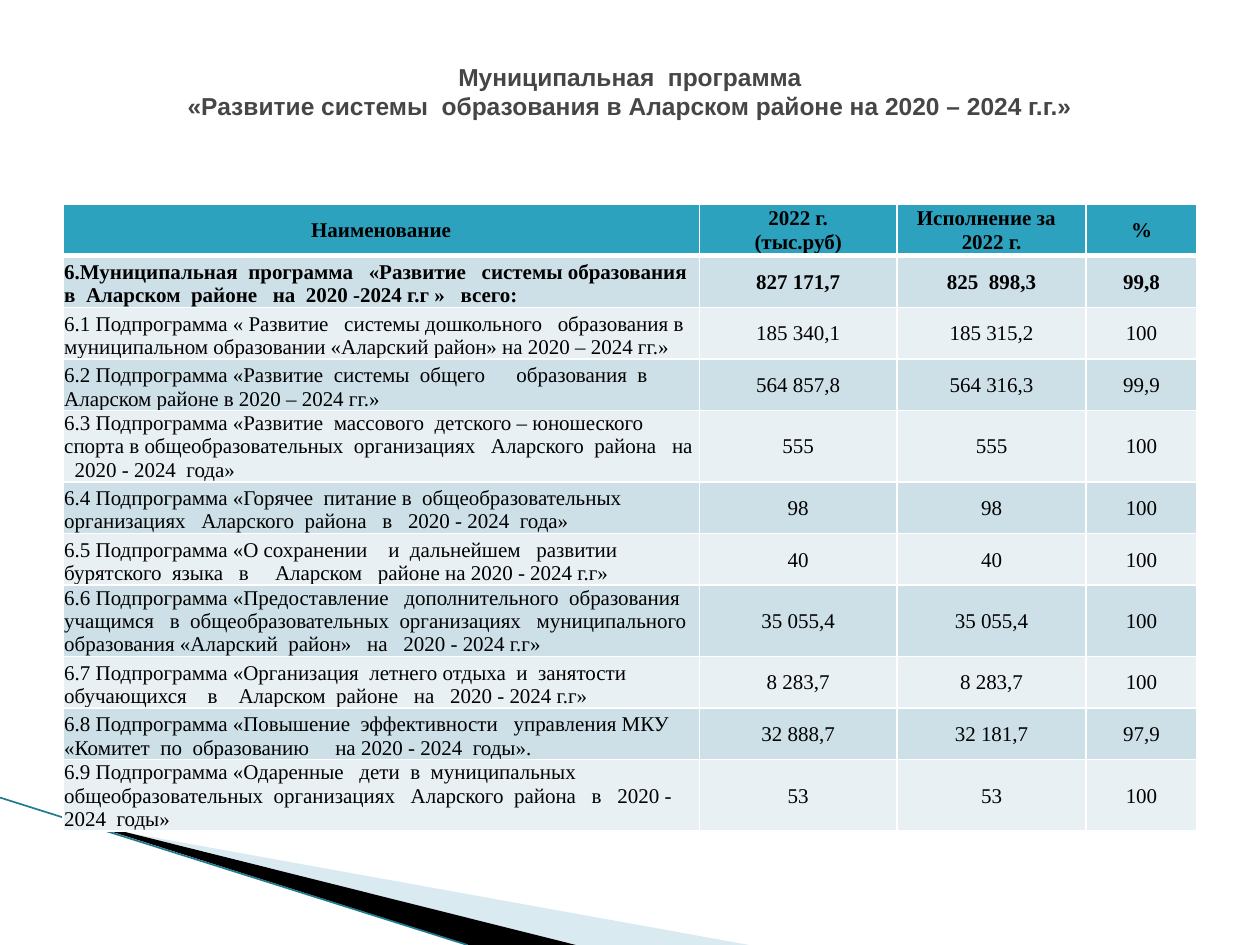
from dataclasses import dataclass

from lxml.etree import SubElement
from pptx import Presentation
from pptx.dml.color import RGBColor
from pptx.enum.shapes import MSO_CONNECTOR as Connector
from pptx.enum.text import MSO_ANCHOR as Anchor, PP_ALIGN as Align
from pptx.oxml.ns import qn
from pptx.util import Emu, Inches, Pt

SLIDE_WIDTH, SLIDE_HEIGHT = Inches(10), Inches(7.5)
WHITE = RGBColor(0xFF, 0xFF, 0xFF)
BLACK = RGBColor(0x00, 0x00, 0x00)
TITLE_GREY = RGBColor(0x46, 0x46, 0x46)
HEADER_TEAL = RGBColor(0x2D, 0xA2, 0xBF)
BAND_DARK = RGBColor(0xCD, 0xE0, 0xE8)
BAND_LIGHT = RGBColor(0xE8, 0xF0, 0xF4)
WEDGE_BLUE = RGBColor(0xA0, 0xCB, 0xDC)
EDGE_TEAL = RGBColor(0x1F, 0x7A, 0x8F)

COLUMN_SHARES = (0.505, 0.157, 0.15, 0.088)
ROW_SHARE = 0.41 / 7.5
TITLE = "Муниципальная  программа\v«Развитие системы  образования в Аларском районе на 2020 – 2024 г.г.»"


@dataclass(frozen=True)
class BudgetRow:
    name: str
    plan: str
    actual: str
    percent: str = "100"

    def texts(self) -> tuple[str, ...]:
        return self.name, self.plan, self.actual, self.percent


@dataclass(frozen=True)
class Wedge:
    points: tuple[tuple[float, float], ...]
    color: RGBColor
    opacity: int = 100


HEADER = BudgetRow("Наименование", "2022 г.\n(тыс.руб)", "Исполнение за   2022 г.", "%")
BUDGET = (
    BudgetRow("6.Муниципальная  программа   «Развитие   системы образования в  Аларском  районе   на  2020 -2024 г.г »   всего:",
              "827 171,7", "825  898,3", "99,8"),
    BudgetRow("6.1 Подпрограмма « Развитие   системы дошкольного   образования в муниципальном образовании «Аларский район» на 2020 – 2024 гг.»",
              "185 340,1", "185 315,2"),
    BudgetRow("6.2 Подпрограмма «Развитие  системы  общего      образования  в  Аларском районе в 2020 – 2024 гг.»",
              "564 857,8", "564 316,3", "99,9"),
    BudgetRow("6.3 Подпрограмма «Развитие  массового  детского – юношеского  спорта в общеобразовательных  организациях   Аларского  района   на   2020 - 2024  года»",
              "555", "555"),
    BudgetRow("6.4 Подпрограмма «Горячее  питание в  общеобразовательных  организациях   Аларского  района   в   2020 - 2024  года»",
              "98", "98"),
    BudgetRow("6.5 Подпрограмма «О сохранении    и  дальнейшем   развитии   бурятского  языка   в     Аларском   районе на 2020 - 2024 г.г»",
              "40", "40"),
    BudgetRow("6.6 Подпрограмма «Предоставление   дополнительного  образования  учащимся   в  общеобразовательных  организациях   муниципального образования «Аларский  район»   на   2020 - 2024 г.г»",
              "35 055,4", "35 055,4"),
    BudgetRow("6.7 Подпрограмма «Организация  летнего отдыха  и  занятости     обучающихся    в    Аларском  районе   на   2020 - 2024 г.г»",
              "8 283,7", "8 283,7"),
    BudgetRow("6.8 Подпрограмма «Повышение  эффективности   управления МКУ  «Комитет  по  образованию     на 2020 - 2024  годы».",
              "32 888,7", "32 181,7", "97,9"),
    BudgetRow("6.9 Подпрограмма «Одаренные   дети  в  муниципальных    общеобразовательных  организациях   Аларского  района   в   2020 - 2024  годы»",
              "53", "53"),
)
WEDGES = (
    Wedge(((0.055, 0.87), (0.595, 1), (0.456, 1)), WEDGE_BLUE, 40),
    Wedge(((0.053, 0.865), (0.457, 1), (0.372, 1)), BLACK),
)


def across(share: float) -> Emu:
    return Emu(round(SLIDE_WIDTH * share))


def down(share: float) -> Emu:
    return Emu(round(SLIDE_HEIGHT * share))


def write_text(frame, text: str, *, font: str, size: float, color: RGBColor,
               bold: bool = False, align: Align = Align.LEFT) -> None:
    frame.word_wrap = True
    for index, line in enumerate(text.split("\n")):
        para = frame.add_paragraph() if index else frame.paragraphs[0]
        para.text = line
        para.alignment = align
        for span in para.runs:
            span.font.name = font
            span.font.size = Pt(size)
            span.font.bold = bold
            span.font.color.rgb = color


def draw_wedge(page, wedge: Wedge) -> None:
    start, *others = [(across(x), down(y)) for x, y in wedge.points]
    builder = page.shapes.build_freeform(*start)
    builder.add_line_segments(others, close=True)
    shape = builder.convert_to_shape()
    shape.shadow.inherit = False
    shape.line.fill.background()
    shape.fill.solid()
    shape.fill.fore_color.rgb = wedge.color
    if wedge.opacity < 100:
        color = shape.fill._xPr.find(qn("a:solidFill"))[0]
        SubElement(color, qn("a:alpha"), val=str(wedge.opacity * 1000))


def draw_edge(page) -> None:
    edge = page.shapes.add_connector(Connector.STRAIGHT, 0, down(0.844), across(0.371), down(1))
    edge.line.color.rgb = EDGE_TEAL
    edge.line.width = Pt(0.95)
    SubElement(edge._element.spPr, qn("a:effectLst"))


def set_borders(cell, widths: dict[str, float]) -> None:
    properties = cell._tc.get_or_add_tcPr()
    for side, width in widths.items():
        border = SubElement(properties, qn(f"a:ln{side}"), w=str(Pt(width)))
        fill = SubElement(border, qn("a:solidFill"))
        SubElement(fill, qn("a:srgbClr"), val=str(WHITE))


def draw_table(page) -> None:
    rows = (HEADER, *BUDGET)
    frame = page.shapes.add_table(len(rows), len(COLUMN_SHARES), across(0.05), down(0.216),
                                  across(sum(COLUMN_SHARES)), down(ROW_SHARE * len(rows)))
    table = frame.table
    for column, share in zip(table.columns, COLUMN_SHARES):
        column.width = across(share)
    for row_index, row in enumerate(rows):
        table.rows[row_index].height = down(ROW_SHARE)
        is_header = row_index == 0
        band = HEADER_TEAL if is_header else BAND_DARK if row_index % 2 else BAND_LIGHT
        for column_index, text in enumerate(row.texts()):
            cell = table.cell(row_index, column_index)
            is_name = column_index == 0 and not is_header
            cell.margin_left = cell.margin_right = cell.margin_top = Inches(0.01)
            cell.margin_bottom = 0
            cell.vertical_anchor = Anchor.BOTTOM if is_name else Anchor.MIDDLE
            set_borders(cell, {"L": 1, "R": 1, "T": 3 if row_index == 1 else 1,
                               "B": 3 if is_header else 1})
            cell.fill.solid()
            cell.fill.fore_color.rgb = band
            write_text(cell.text_frame, text, font="Times New Roman", size=12, color=BLACK,
                       bold=row_index < 2, align=Align.LEFT if is_name else Align.CENTER)


def place_title(page) -> None:
    title = page.shapes.title
    title.left, title.top = across(0.05), down(0.04)
    title.width, title.height = across(0.9), down(0.113)
    title.text_frame.vertical_anchor = Anchor.MIDDLE
    write_text(title.text_frame, TITLE, font="Arial", size=14, color=TITLE_GREY,
               bold=True, align=Align.CENTER)


def main() -> None:
    deck = Presentation()
    deck.slide_width, deck.slide_height = SLIDE_WIDTH, SLIDE_HEIGHT
    page = deck.slides.add_slide(deck.slide_layouts[5])
    for wedge in WEDGES:
        draw_wedge(page, wedge)
    draw_edge(page)
    draw_table(page)
    place_title(page)
    deck.save("out.pptx")


if __name__ == "__main__":
    main()
